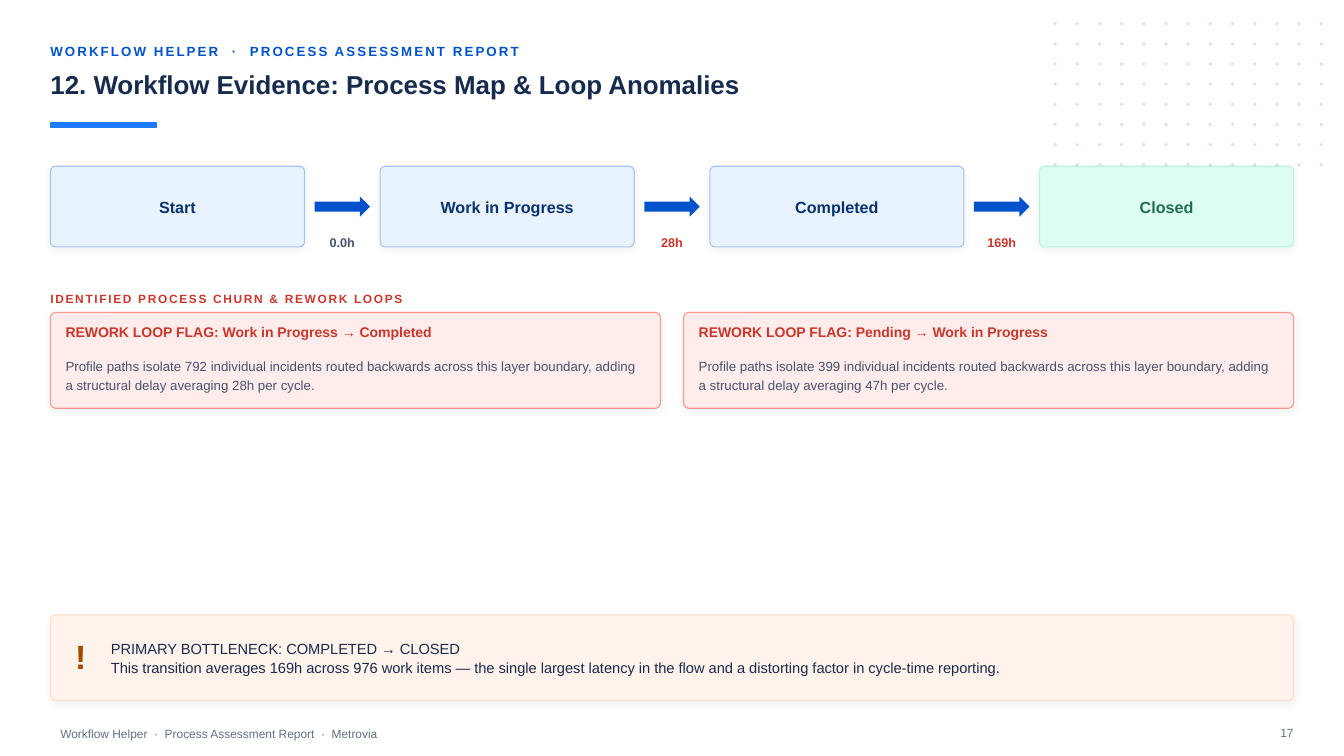
"""Build the process map and loop anomalies slide."""
import itertools

import lxml.etree
import pptx
import pptx.dml.color
import pptx.enum.shapes
import pptx.enum.text
import pptx.oxml.ns
import pptx.util

Inches = pptx.util.Inches
Pt = pptx.util.Pt
RGBColor = pptx.dml.color.RGBColor
SHAPE = pptx.enum.shapes.MSO_SHAPE
ANCHOR = pptx.enum.text.MSO_ANCHOR
ALIGN = pptx.enum.text.PP_ALIGN
qn = pptx.oxml.ns.qn

WHITE = RGBColor(0xFF, 0xFF, 0xFF)
DOT = RGBColor(0xCF, 0xE0, 0xF8)
BLUE = RGBColor(0x00, 0x52, 0xCC)
ACCENT = RGBColor(0x1D, 0x7A, 0xFC)
INK = RGBColor(0x17, 0x2B, 0x4D)
SLATE = RGBColor(0x44, 0x54, 0x6F)
MUTED = RGBColor(0x62, 0x6F, 0x86)
RED = RGBColor(0xC9, 0x37, 0x2C)
RED_FILL = RGBColor(0xFF, 0xEC, 0xEB)
RED_LINE = RGBColor(0xFD, 0x98, 0x91)
NAVY = RGBColor(0x09, 0x32, 0x6C)
BLUE_FILL = RGBColor(0xE9, 0xF2, 0xFF)
BLUE_LINE = RGBColor(0xA6, 0xC5, 0xF2)
GREEN = RGBColor(0x21, 0x6E, 0x4E)
GREEN_FILL = RGBColor(0xDC, 0xFF, 0xF1)
GREEN_LINE = RGBColor(0xBA, 0xF3, 0xDB)
BROWN = RGBColor(0xA5, 0x48, 0x00)
ORANGE_FILL = RGBColor(0xFF, 0xF3, 0xEB)
ORANGE_LINE = RGBColor(0xFE, 0xDE, 0xC8)
SHADOW = RGBColor(0x12, 0x2A, 0x35)

MARGIN = 0.5
CONTENT_WIDTH = 12.33
STAGES = [
    ("Start", BLUE_FILL, BLUE_LINE, NAVY),
    ("Work in Progress", BLUE_FILL, BLUE_LINE, NAVY),
    ("Completed", BLUE_FILL, BLUE_LINE, NAVY),
    ("Closed", GREEN_FILL, GREEN_LINE, GREEN),
]
DELAYS = [("0.0h", SLATE), ("28h", RED), ("169h", RED)]
LOOPS = [
    ("Work in Progress → Completed", "792", "28h"),
    ("Pending → Work in Progress", "399", "47h"),
]


def add_text(slide, box, lines, size, color, bold=False, align=ALIGN.LEFT,
             anchor=ANCHOR.MIDDLE, insets=(0, 0), leading=None, tracking=None):
    """Add a wrapped text box with one paragraph per line."""
    frame = slide.shapes.add_textbox(*map(Inches, box)).text_frame
    horizontal, vertical = map(Inches, insets)
    frame_format = {
        "word_wrap": True, "vertical_anchor": anchor,
        "margin_left": horizontal, "margin_right": horizontal,
        "margin_top": vertical, "margin_bottom": vertical,
    }
    for name, value in frame_format.items():
        setattr(frame, name, value)
    font_format = {"name": "Arial", "size": Pt(size), "bold": bold}
    for index, line in enumerate(lines):
        paragraph = frame.add_paragraph() if index else frame.paragraphs[0]
        paragraph.alignment = align
        if leading:
            paragraph.line_spacing = Pt(leading)
        run = paragraph.add_run()
        run.text = line
        for name, value in font_format.items():
            setattr(run.font, name, value)
        run.font.color.rgb = color
        if tracking:
            run._r.get_or_add_rPr().set("spc", str(int(tracking * 100)))


def add_solid(slide, kind, box, fill, line=None, line_width=0.8):
    """Add a flat filled shape, outlined when a line colour is given."""
    shape = slide.shapes.add_shape(kind, *map(Inches, box))
    shape.shadow.inherit = False
    shape.fill.solid()
    shape.fill.fore_color.rgb = fill
    if line is None:
        shape.line.fill.background()
    else:
        shape.line.color.rgb = line
        shape.line.width = Pt(line_width)
    return shape


def add_card(slide, box, fill, line):
    """Add a rounded card with a fixed corner radius and a soft shadow."""
    card = add_solid(slide, SHAPE.ROUNDED_RECTANGLE, box, fill, line)
    card.adjustments[0] = 0.05 / box[3]
    effects = card._element.spPr.find(qn("a:effectLst"))
    shadow = lxml.etree.SubElement(
        effects, qn("a:outerShdw"), blurRad=str(Pt(6)), dist=str(Pt(1.5)),
        dir="5400000", algn="bl", rotWithShape="0")
    color = lxml.etree.SubElement(shadow, qn("a:srgbClr"), val=str(SHADOW))
    lxml.etree.SubElement(color, qn("a:alpha"), val="6000")


def add_dot_grid(slide, left, top, columns, rows):
    """Add the grid of pale dots in the corner."""
    for row, column in itertools.product(range(rows), range(columns)):
        box = (left + 0.22 * column, top + 0.2 * row, 0.03, 0.03)
        dot = add_solid(slide, SHAPE.OVAL, box, DOT)
        color = dot._element.spPr.find(qn("a:solidFill"))[0]
        lxml.etree.SubElement(color, qn("a:alpha"), val="92000")


def add_header(slide, left, top, width):
    """Add the eyebrow, the title and the accent bar."""
    add_text(slide, (left, top, width, 0.22),
             ["WORKFLOW HELPER  ·  PROCESS ASSESSMENT REPORT"],
             9.5, BLUE, bold=True, tracking=1.5)
    add_text(slide, (left, top + 0.28, width, 0.45),
             ["12. Workflow Evidence: Process Map & Loop Anomalies"],
             18.5, INK, bold=True, anchor=ANCHOR.TOP)
    add_solid(slide, SHAPE.RECTANGLE, (left, top + 0.82, 1.05, 0.04),
              ACCENT, ACCENT, 1)


def add_process_map(slide, left, top, width, height):
    """Add the stage cards, with an arrow and a delay in each gap."""
    gap = 0.75
    card_width = (width - gap * len(DELAYS)) / len(STAGES)
    pitch = card_width + gap
    for index, (name, fill, line, color) in enumerate(STAGES):
        x = left + index * pitch
        add_card(slide, (x, top, card_width, height), fill, line)
        add_text(slide, (x + 0.1, top, card_width - 0.2, height), [name],
                 11.5, color, bold=True, align=ALIGN.CENTER)
    for index, (delay, color) in enumerate(DELAYS):
        x = left + index * pitch + card_width
        add_solid(slide, SHAPE.RIGHT_ARROW, (x + 0.1, top + 0.3, 0.55, 0.2), BLUE)
        add_text(slide, (x - 0.1, top + 0.65, gap + 0.2, 0.22), [delay],
                 9, color, bold=True, align=ALIGN.CENTER)


def add_rework_loops(slide, left, top, width):
    """Add the section label and the rework loop cards."""
    add_text(slide, (left, top, width, 0.22),
             ["IDENTIFIED PROCESS CHURN & REWORK LOOPS"],
             8.5, RED, bold=True, tracking=1.2)
    card_width = 6.05
    card_top = top + 0.25
    for index, (route, incidents, delay) in enumerate(LOOPS):
        x = left + index * (width - card_width)
        add_card(slide, (x, card_top, card_width, 0.95), RED_FILL, RED_LINE)
        add_text(slide, (x + 0.15, card_top + 0.08, card_width - 0.3, 0.22),
                 [f"REWORK LOOP FLAG: {route}"], 10, RED, bold=True)
        add_text(slide, (x + 0.15, card_top + 0.34, card_width - 0.3, 0.55),
                 [f"Profile paths isolate {incidents} individual incidents routed "
                  "backwards across this layer boundary, adding a structural "
                  f"delay averaging {delay} per cycle."], 9.5, SLATE, leading=13)


def add_bottleneck(slide, left, top, width, height):
    """Add the primary bottleneck callout."""
    add_card(slide, (left, top, width, height), ORANGE_FILL, ORANGE_LINE)
    add_text(slide, (left + 0.15, top + 0.18, 0.3, 0.45), ["!"],
             24, BROWN, bold=True, align=ALIGN.CENTER)
    add_text(slide, (left + 0.6, top + 0.12, width - 0.8, 0.6),
             ["PRIMARY BOTTLENECK: COMPLETED → CLOSED",
              "This transition averages 169h across 976 work items — the single "
              "largest latency in the flow and a distorting factor in "
              "cycle-time reporting."], 10.5, INK, leading=14)


def add_footer(slide, left, top):
    """Add the report name and the page number."""
    add_text(slide, (left, top, 9.5, 0.25),
             ["Workflow Helper  ·  Process Assessment Report  ·  Metrovia"],
             8.5, MUTED, insets=(0.1, 0.05))
    add_text(slide, (left + 12.1, top, 0.87, 0.33), ["17"],
             8.5, MUTED, anchor=ANCHOR.TOP, insets=(0.1, 0.05))


def main():
    """Build and save the presentation."""
    presentation = pptx.Presentation()
    presentation.slide_width = Inches(13.33)
    presentation.slide_height = Inches(7.5)
    slide = presentation.slides.add_slide(presentation.slide_layouts[6])
    slide.background.fill.solid()
    slide.background.fill.fore_color.rgb = WHITE
    add_dot_grid(slide, 10.45, 0.22, 13, 8)
    add_header(slide, MARGIN, 0.4, CONTENT_WIDTH)
    add_process_map(slide, MARGIN, 1.65, CONTENT_WIDTH, 0.8)
    add_rework_loops(slide, MARGIN, 2.85, CONTENT_WIDTH)
    add_bottleneck(slide, MARGIN, 6.1, CONTENT_WIDTH, 0.85)
    add_footer(slide, MARGIN, 7.15)
    presentation.save("out.pptx")


if __name__ == "__main__":
    main()
